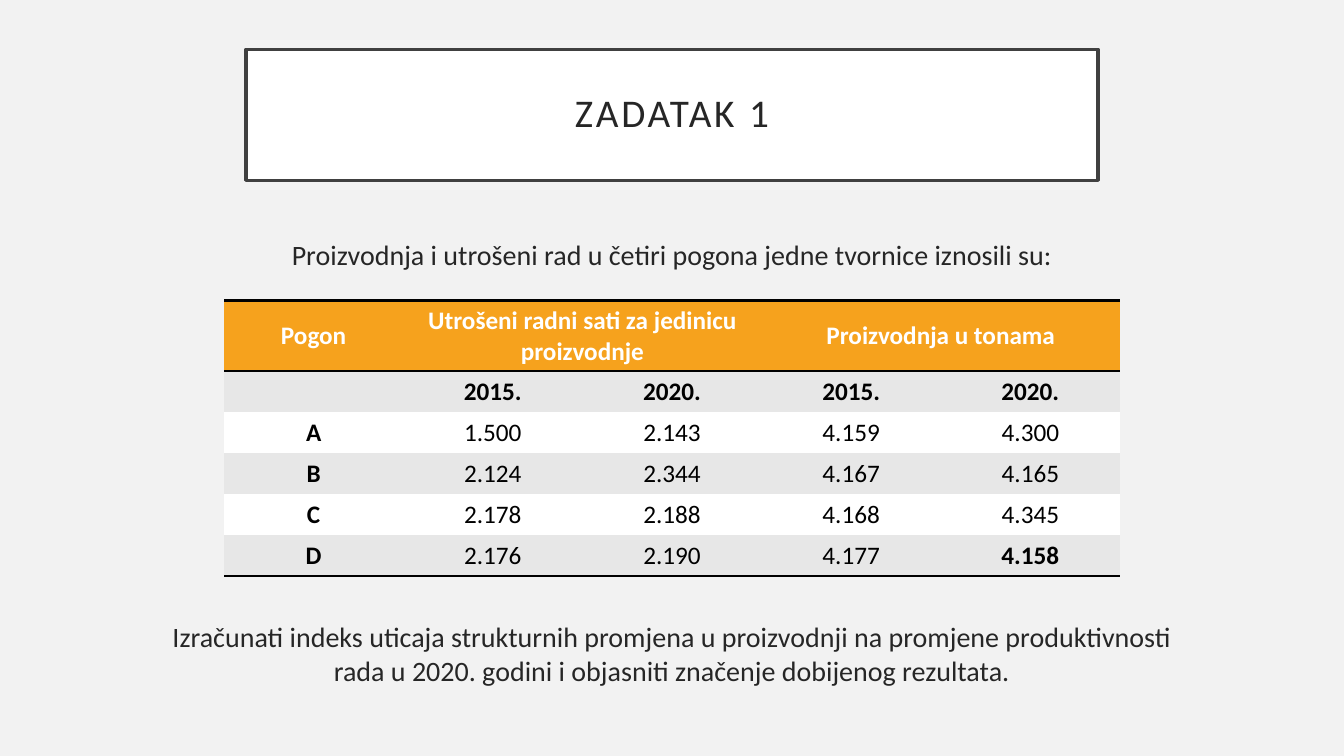
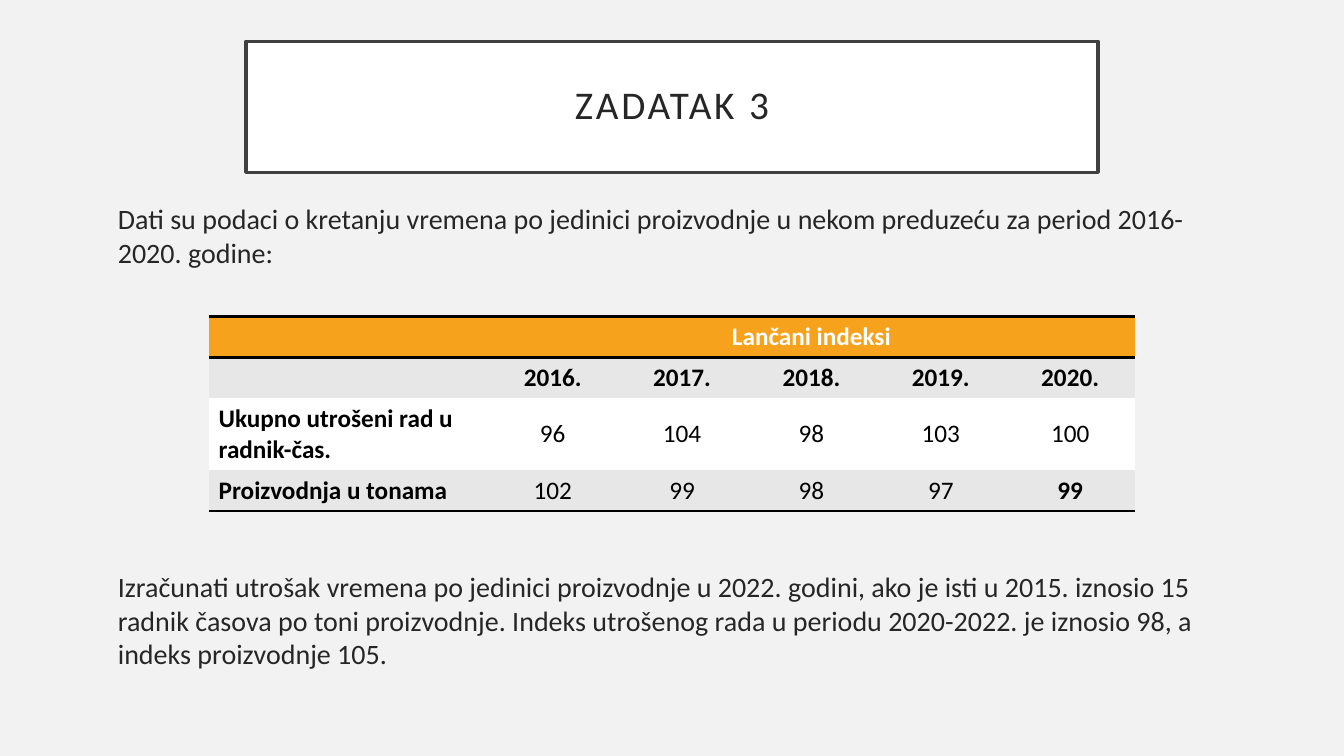
from dataclasses import dataclass

from lxml import etree
from pptx import Presentation
from pptx import util as u
from pptx.dml.color import RGBColor
from pptx.enum import text
from pptx.oxml import ns


@dataclass(frozen=True)
class Theme:
    font: str = "Calibri"
    page: str = "F2F2F2"
    paper: str = "FFFFFF"
    frame: str = "404040"
    ink: str = "262626"
    accent: str = "F6A21D"
    band: str = "E7E7E7"
    rule: str = "000000"
    title_size: int = 28
    body_size: int = 20
    table_size: int = 18
    frame_width: float = 2.5
    rule_width: int = 2
    title_spacing: int = 2
    title_inset: float = 0.2


@dataclass(frozen=True)
class Box:
    """Left, top, width and height in percent of the slide's size."""
    left: float
    top: float
    width: float
    height: float

    def place(self):
        return (across(self.left), down(self.top),
                across(self.width), down(self.height))


THEME = Theme()
WIDTH, HEIGHT = u.Inches(13.33), u.Inches(7.5)
TITLE_ONLY = 5
TABLE_ROW = 5.42  # percent of the slide's height
PLAIN_TABLE = "{2D5ABB26-0587-4C30-8999-92F81FD0307C}"
CENTER, LEFT = text.PP_ALIGN.CENTER, text.PP_ALIGN.LEFT


def across(share):
    return round(WIDTH * share / 100)


def down(share):
    return round(HEIGHT * share / 100)


def paint(fill, color):
    fill.solid()
    fill.fore_color.rgb = RGBColor.from_string(color)


def write(para, words, size, color, bold=False, align=LEFT):
    para.alignment = align
    span = para.add_run()
    span.text = words
    span.font.name = THEME.font
    span.font.size = u.Pt(size)
    span.font.bold = bold
    span.font.color.rgb = RGBColor.from_string(color)
    return span


# Framed title
def add_title(page, words, box):
    title = page.shapes.title
    title.left, title.top, title.width, title.height = box.place()
    paint(title.fill, THEME.paper)
    paint(title.line.fill, THEME.frame)
    title.line.width = u.Pt(THEME.frame_width)
    frame = title.text_frame
    frame.word_wrap = True
    frame.vertical_anchor = text.MSO_ANCHOR.MIDDLE
    frame.margin_left = frame.margin_right = u.Inches(THEME.title_inset)
    frame.margin_top = frame.margin_bottom = u.Inches(THEME.title_inset)
    para = frame.paragraphs[0]
    para.line_spacing = 0.9
    span = write(para, words, THEME.title_size, THEME.ink, align=CENTER)
    span.font._element.set("spc", str(THEME.title_spacing * 100))


# Running text above or below a table
def add_text(page, words, box, align):
    frame = page.shapes.add_textbox(*box.place()).text_frame
    frame.word_wrap = True
    write(frame.paragraphs[0], words, THEME.body_size, THEME.ink, align=align)


def add_rules(cell, sides):
    """Draw border lines; they have to stand before the cell's fill."""
    properties = cell._tc.get_or_add_tcPr()
    for place, side in enumerate(sides):
        line = etree.Element(ns.qn("a:ln" + side),
                             w=str(u.Pt(THEME.rule_width)))
        fill = etree.SubElement(line, ns.qn("a:solidFill"))
        etree.SubElement(fill, ns.qn("a:srgbClr"), val=THEME.rule)
        properties.insert(place, line)


# Table: accent header, banded rows, bold first column and last cell
def add_table(page, rows, left, top, width, columns, heights, spans,
              label_align):
    box = Box(left, top, width, TABLE_ROW * sum(heights))
    table = page.shapes.add_table(len(rows), len(columns), *box.place()).table
    table.first_row = table.horz_banding = False
    table._tbl.tblPr.find(ns.qn("a:tableStyleId")).text = PLAIN_TABLE
    for column, weight in zip(table.columns, columns):
        column.width = across(width * weight / sum(columns))
    for row, weight in zip(table.rows, heights):
        row.height = down(TABLE_ROW * weight)

    last = len(rows) - 1
    for r, row in enumerate(rows):
        for c, words in enumerate(row):
            cell = table.cell(r, c)
            cell.vertical_anchor = text.MSO_ANCHOR.MIDDLE
            banded = THEME.band if r % 2 else THEME.paper
            paint(cell.fill, banded if r else THEME.accent)
            add_rules(cell, ["T", "B"] if r == 0 else ["B"] if r == last else [])
            if words:
                bold = r < 2 or c == 0 or (r == last and c == len(row) - 1)
                write(cell.text_frame.paragraphs[0], words, THEME.table_size,
                      THEME.rule if r else THEME.paper, bold,
                      label_align if c == 0 else CENTER)
    for first, end in spans:
        table.cell(0, first).merge(table.cell(0, end))


# Task slide: title, introduction, table, question
def add_task(deck, title, title_top, intro, question, text_left, text_width,
             text_tops, align, table):
    page = deck.slides.add_slide(deck.slide_layouts[TITLE_ONLY])
    add_title(page, title, Box(18.3, title_top, 63.4, 17.33))
    for words, top in zip((intro, question), text_tops):
        add_text(page, words, Box(text_left, top, text_width, 10), align)
    add_table(page, **table)


TASKS = [
    dict(
        title="ZADATAK 1", title_top=6.53,
        intro="Proizvodnja i utrošeni rad u četiri pogona jedne tvornice "
              "iznosili su:",
        question="Izračunati indeks uticaja strukturnih promjena u proizvodnji "
                 "na promjene produktivnosti rada u 2020. godini i objasniti "
                 "značenje dobijenog rezultata.",
        text_left=11.25, text_width=77.5, text_tops=(30.8, 81.33),
        align=CENTER,
        table=dict(
            rows=[
                ["Pogon", "Utrošeni radni sati za jedinicu proizvodnje", "",
                 "Proizvodnja u tonama", ""],
                ["", "2015.", "2020.", "2015.", "2020."],
                ["A", "1.500", "2.143", "4.159", "4.300"],
                ["B", "2.124", "2.344", "4.167", "4.165"],
                ["C", "2.178", "2.188", "4.168", "4.345"],
                ["D", "2.176", "2.190", "4.177", "4.158"],
            ],
            left=16.67, top=39.73, width=66.67, columns=[1] * 5,
            heights=[1.73] + [1] * 5, spans=[(1, 2), (3, 4)],
            label_align=CENTER),
    ),
    dict(
        title="ZADATAK 3", title_top=5.47,
        intro="Dati su podaci o kretanju vremena po jedinici proizvodnje u "
              "nekom preduzeću za period 2016-2020. godine:",
        question="Izračunati utrošak vremena po jedinici proizvodnje u 2022. "
                 "godini, ako je isti u 2015. iznosio 15 radnik časova po toni "
                 "proizvodnje. Indeks utrošenog rada u periodu 2020-2022. je "
                 "iznosio 98, a indeks proizvodnje 105.",
        text_left=8.03, text_width=84, text_tops=(26, 74.67),
        align=LEFT,
        table=dict(
            rows=[
                ["", "Lančani indeksi", "", "", "", ""],
                ["", "2016.", "2017.", "2018.", "2019.", "2020."],
                ["Ukupno utrošeni rad u radnik-čas.",
                 "96", "104", "98", "103", "100"],
                ["Proizvodnja u tonama", "102", "99", "98", "97", "99"],
            ],
            left=15.52, top=41.87, width=68.92, columns=[2.16] + [1] * 5,
            heights=[1, 1, 1.75, 1], spans=[(1, 5)], label_align=LEFT),
    ),
]


def main():
    deck = Presentation()
    deck.slide_width, deck.slide_height = WIDTH, HEIGHT
    paint(deck.slide_master.background.fill, THEME.page)
    for task in TASKS:
        add_task(deck, **task)
    deck.save("out.pptx")


if __name__ == "__main__":
    main()
